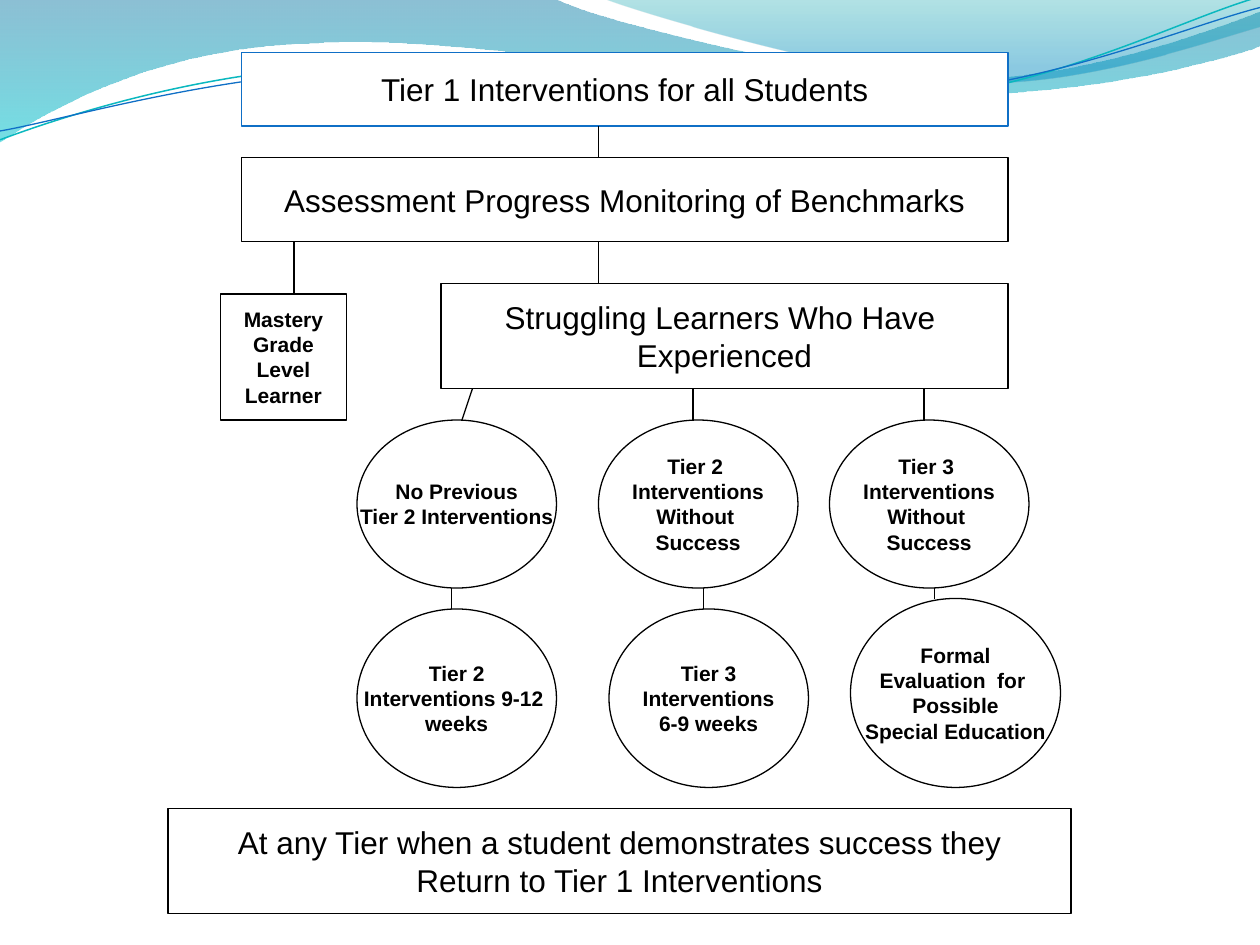
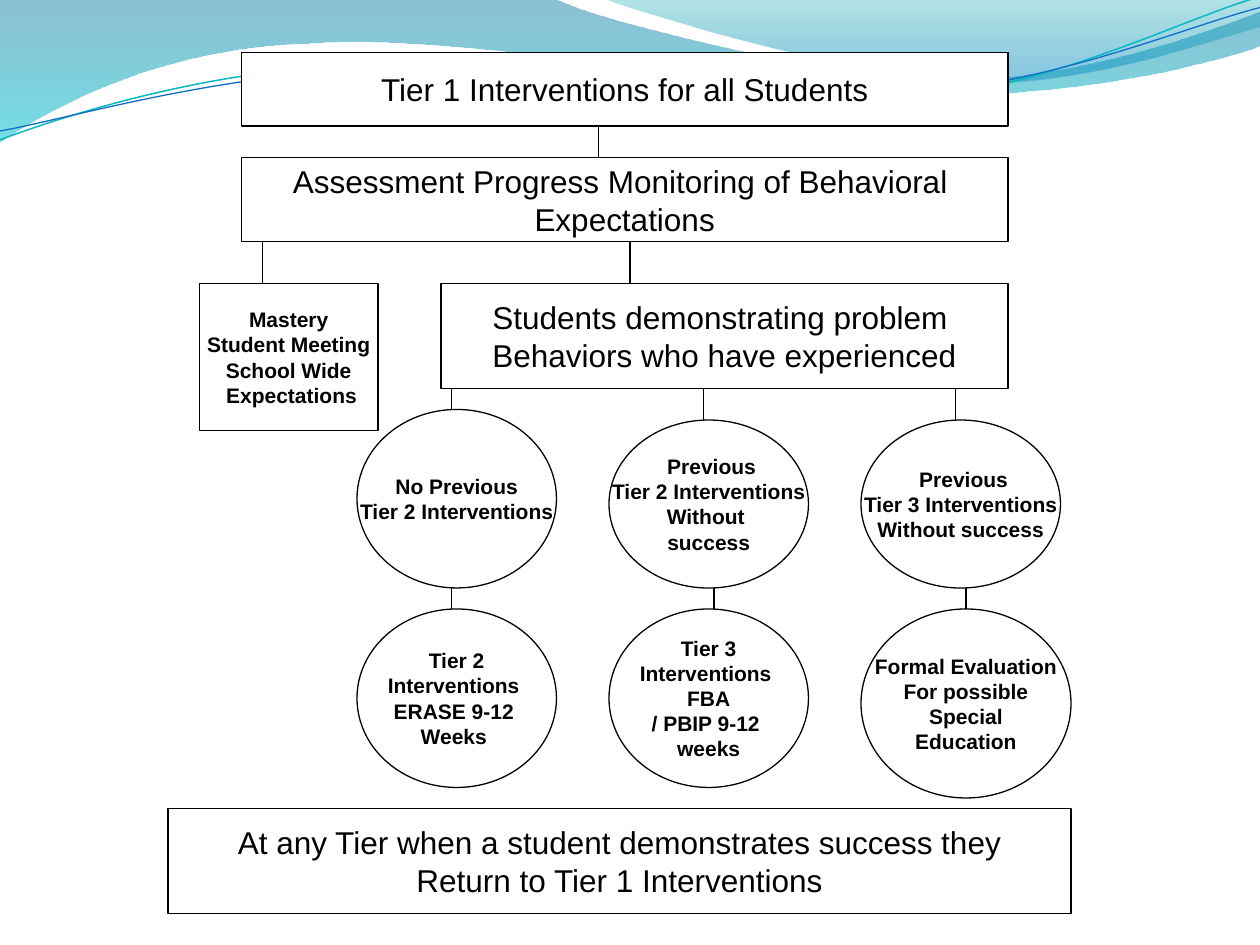
import math

import lxml.etree
import pptx
import pptx.dml.color
import pptx.enum.shapes
import pptx.enum.text
import pptx.oxml.ns
import pptx.util

COLS, ROWS = 120, 90  # grid over a 10 by 7.5 inch slide
INK = {"black": "000000", "white": "FFFFFF", "blue": "0F6FC6", "teal": "0AB8BF",
       "deep": "0074A1", "aqua": "00C6CF", "sea": "00A1A9", "sky": "008BBF"}
BIG, SMALL = 18, 12
TILT = 357.3  # turn of the thin curves, in degrees
KIND = pptx.enum.shapes.MSO_SHAPE
tag = pptx.oxml.ns.qn

# Waves: a start point, then pairs (straight) or sextets (curved), in inches.
# Stops are position, ink and opacity in percent.
BANDS = [
    ([(0, 0), (4.4, -0.01), (4.76, 0.17, 6.64, 0.63, 7.58, 0.63),
      (8.53, 0.63, 9.58, 0.26, 10, 0.09), (10.01, 0.36),
      (9.83, 0.44, 8.7, 0.76, 7.46, 0.75), (6.22, 0.75, 3.82, 0.28, 2.57, 0.34),
      (1.29, 0.36, 0.46, 0.83, -0.01, 1.13), (0, 0)],
     [(0, "deep", 45), (1, "aqua", 55)]),
    ([(4.79, -0.01), (5.09, 0.11, 6.82, 0.62, 7.69, 0.65),
      (8.56, 0.69, 9.61, 0.32, 10, 0.21), (10, 0), (4.79, -0.01)],
     [(0, "sea", 30), (0.8, "sky", 45)]),
]
# Curves as seen after the turn, then the centre they turn about.
CURVES = [
    ([(0, 1.11), (0.48, 0.93, 1.58, 0.57, 2.77, 0.52),
      (3.95, 0.47, 5.93, 0.89, 7.13, 0.8), (8.33, 0.71, 9.38, 0.15, 9.98, -0.02)],
     (4.99, 0.57), "teal", 0.85),
    ([(0, 1.04), (0.47, 0.96, 1.64, 0.61, 2.83, 0.56),
      (4.03, 0.51, 5.97, 0.84, 7.17, 0.75), (8.36, 0.67, 9.41, 0.21, 10, 0.06)],
     (5, 0.59), "blue", 0.75),
]


def pairs(part):
    return list(zip(part[::2], part[1::2]))


def unturn(part, mid):
    """Undo the tilt of one part about a centre."""
    cos, sin = (f(math.radians(-TILT)) for f in (math.cos, math.sin))
    flat = []
    for x, y in pairs(part):
        dx, dy = x - mid[0], y - mid[1]
        flat += [mid[0] + dx * cos - dy * sin, mid[1] + dx * sin + dy * cos]
    return flat


class Deck:
    """Holds the style and the current slide."""

    def __init__(self):
        self.prs = pptx.Presentation()
        self.prs.slide_width = pptx.util.Inches(10)
        self.prs.slide_height = pptx.util.Inches(7.5)
        self.base = self.prs.slide_layouts[6]
        for holder in list(self.base.placeholders):
            holder.element.getparent().remove(holder.element)
        self.slide = None

    def start(self):
        self.slide = self.prs.slides.add_slide(self.base)

    def place(self, col, row):
        return (round(self.prs.slide_width * col / COLS),
                round(self.prs.slide_height * row / ROWS))

    def tint(self, name):
        return pptx.dml.color.RGBColor.from_string(INK[name])

    def stroke(self, item, ink="black", width=0.75):
        item.line.color.rgb = self.tint(ink)
        item.line.width = pptx.util.Pt(width)

    def wave(self, parts, closed):
        """Draw straight sides, then bend those that have control points."""
        parts = [[pptx.util.Inches(v) for v in part] for part in parts]
        ends = [part[-2:] for part in parts]
        pen = self.slide.shapes.build_freeform(*ends[0])
        pen.add_line_segments(ends[1:], close=closed)
        shape = pen.convert_to_shape()
        shape.shadow.inherit = False
        sides = list(shape.element.iter(tag("a:lnTo")))
        for side, part in zip(sides, parts[1:]):
            if len(part) == 2:
                continue
            side.tag = tag("a:cubicBezTo")
            for slot, (x, y) in enumerate(pairs(part)[:2]):
                side.insert(slot, lxml.etree.Element(
                    tag("a:pt"), x=str(x - shape.left), y=str(y - shape.top)))
        return shape

    def share(self, shape):
        self.base.shapes.element.append(shape.element)

    def band(self, parts, stops):
        shape = self.wave(parts, True)
        shape.line.fill.background()
        shape.fill.gradient()
        shape.fill.gradient_angle = 270
        for stop, (pos, ink, _) in zip(shape.fill.gradient_stops, stops):
            stop.position = pos
            stop.color.rgb = self.tint(ink)
        tints = list(shape.element.spPr.iter(tag("a:srgbClr")))
        for node, (_, _, alpha) in zip(tints, stops):
            lxml.etree.SubElement(node, tag("a:alpha"), val=str(alpha * 1000))
        self.share(shape)

    def curve(self, parts, mid, ink, width):
        shape = self.wave([unturn(part, mid) for part in parts], False)
        shape.rotation = TILT
        shape.fill.background()
        self.stroke(shape, ink, width)
        self.share(shape)

    def node(self, kind, area, text, size, bold=False, edge="black"):
        col, row, wide, high = area
        shape = self.slide.shapes.add_shape(
            kind, *self.place(col, row), *self.place(wide, high))
        shape.shadow.inherit = False
        shape.fill.solid()
        shape.fill.fore_color.rgb = self.tint("white")
        self.stroke(shape, edge)
        frame = shape.text_frame
        frame.text = text
        frame.word_wrap = False
        frame.vertical_anchor = pptx.enum.text.MSO_ANCHOR.MIDDLE
        for para in frame.paragraphs:
            para.alignment = pptx.enum.text.PP_ALIGN.CENTER
            for run in para.runs:
                run.font.name = "Arial"
                run.font.size = pptx.util.Pt(size)
                run.font.bold = bold
                run.font.color.rgb = self.tint("black")

    def box(self, area, text, edge="black"):
        self.node(KIND.RECTANGLE, area, text, BIG, edge=edge)

    def note(self, area, text):
        self.node(KIND.RECTANGLE, area, text, SMALL, bold=True)

    def oval(self, area, text):
        self.node(KIND.OVAL, area, text, SMALL, bold=True)

    def link(self, col, top, low, end=None):
        """Join two rows, straight down unless an end column is given."""
        line = self.slide.shapes.add_connector(
            pptx.enum.shapes.MSO_CONNECTOR.STRAIGHT,
            *self.place(col, top), *self.place(col if end is None else end, low))
        self.stroke(line)
        lxml.etree.SubElement(line.element.spPr, tag("a:effectLst"))

    def chart(self, edge, check, group, goal, ovals, links):
        """Draw one flow chart of tiers."""
        self.box((23, 5, 73, 7), "Tier 1 Interventions for all Students", edge)
        self.box((23, 15, 73, 8), check)
        self.note(*goal)
        self.box((42, 27, 54, 10), group)
        for area, text in ovals:
            self.oval(area, text)
        self.box((16, 77, 86, 10),
                 "At any Tier when a student demonstrates success they\n"
                 "Return to Tier 1 Interventions")
        self.link(57, 12, 15)
        for ends in links:
            self.link(*ends)


def main():
    deck = Deck()

    # Slide 1: benchmarks, with the shared waves
    deck.start()
    for band in BANDS:
        deck.band(*band)
    for curve in CURVES:
        deck.curve(*curve)
    deck.chart(
        edge="blue",
        check="Assessment Progress Monitoring of Benchmarks",
        group="Struggling Learners Who Have \nExperienced",
        goal=((21, 28, 12, 12), " Mastery \nGrade\nLevel\nLearner"),
        ovals=[
            ((34, 40, 19, 16), "No Previous\nTier 2 Interventions"),
            ((57, 40, 19, 16), "Tier 2 \nInterventions\nWithout \nSuccess"),
            ((79, 40, 19, 16), "Tier 3 \nInterventions\nWithout \nSuccess"),
            ((34, 58, 19, 17), "Tier 2\nInterventions 9-12 \nweeks"),
            ((58, 58, 19, 17), "Tier 3\nInterventions\n6-9 weeks"),
            ((81, 57, 20, 18),
             "Formal\nEvaluation  for \nPossible\nSpecial Education"),
        ],
        links=[(57, 23, 27), (28, 23, 28), (45, 37, 40, 44), (66, 37, 40),
               (88, 37, 40), (43, 56, 58), (67, 56, 58), (89, 56, 57)])

    # Slide 2: behavior
    deck.start()
    deck.chart(
        edge="black",
        check="Assessment Progress Monitoring of Behavioral \nExpectations",
        group="Students demonstrating problem \nBehaviors who have experienced",
        goal=((19, 27, 17, 14),
              " Mastery \nStudent Meeting\nSchool Wide\n Expectations"),
        ovals=[
            ((34, 39, 19, 17), "No Previous\nTier 2 Interventions"),
            ((58, 40, 19, 16),
             " Previous\nTier 2 Interventions\nWithout \nsuccess"),
            ((82, 40, 19, 16), " Previous\nTier 3 Interventions\nWithout success"),
            ((34, 58, 19, 17), "Tier 2\nInterventions \nERASE 9-12 \nWeeks "),
            ((58, 58, 19, 17),
             "Tier 3\nInterventions \nFBA\n/ PBIP 9-12 \nweeks"),
            ((82, 58, 20, 18),
             "Formal Evaluation\nFor possible\nSpecial\nEducation"),
        ],
        links=[(25, 23, 27), (60, 23, 27), (43, 37, 39), (43, 56, 58),
               (67, 37, 40), (68, 56, 58), (91, 37, 40), (92, 56, 58)])

    deck.prs.save("out.pptx")


if __name__ == "__main__":
    main()
